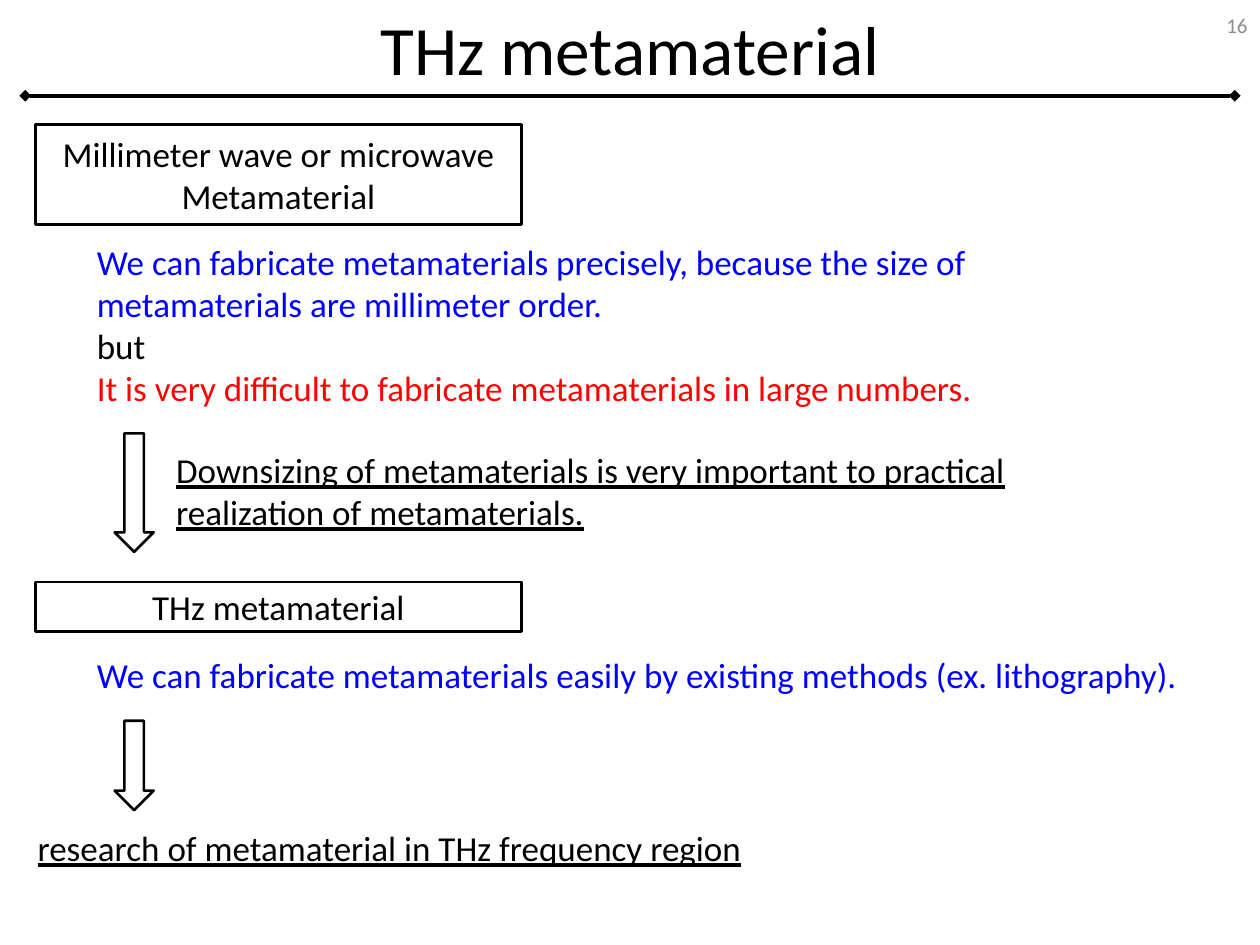
from dataclasses import dataclass

from lxml.etree import SubElement
from pptx import Presentation
from pptx.dml.color import RGBColor as Rgb
from pptx.enum.shapes import MSO_CONNECTOR as Link, MSO_SHAPE as Kind
from pptx.enum.text import MSO_ANCHOR as Anchor, PP_ALIGN as Align
from pptx.oxml.ns import qn
from pptx.util import Inches, Pt


@dataclass(frozen=True)
class Theme:
    font: str = "Calibri"
    black: str = "000000"
    blue: str = "0000FF"
    red: str = "FF0000"
    gray: str = "8C8C8C"
    title: float = 39.6
    body: float = 20
    small: float = 12
    rule: float = 2.25
    edge: float = 1.5


@dataclass(frozen=True)
class Area:
    """Place on the grid, in columns and rows."""
    col: float
    row: float
    wide: float
    high: float


@dataclass(frozen=True)
class Line:
    text: str
    color: str = Theme.black
    size: float = Theme.body
    under: bool = False


@dataclass(frozen=True)
class Note:
    area: Area
    lines: tuple[Line, ...]
    align: Align = Align.LEFT
    anchor: Anchor = Anchor.TOP


@dataclass(frozen=True)
class Figure:
    kind: Kind
    area: Area
    lines: tuple[Line, ...] = ()


COLS, ROWS = 100, 75
LOOK = Theme()
deck = Presentation()
deck.slide_width, deck.slide_height = Inches(10), Inches(7.5)
slide = deck.slides.add_slide(deck.slide_layouts[6])


def x(cols: float) -> int:
    return round(deck.slide_width * cols / COLS)


def y(rows: float) -> int:
    return round(deck.slide_height * rows / ROWS)


def frame(area: Area) -> tuple[int, int, int, int]:
    return x(area.col), y(area.row), x(area.wide), y(area.high)


def write(shape, lines: tuple[Line, ...], align: Align, anchor: Anchor) -> None:
    body = shape.text_frame
    body.text = "\n".join(line.text for line in lines)
    body.word_wrap = True
    body.vertical_anchor = anchor
    for para, line in zip(body.paragraphs, lines):
        para.alignment = align
        for run in para.runs:
            run.font.name = LOOK.font
            run.font.size = Pt(line.size)
            run.font.underline = line.under
            run.font.color.rgb = Rgb.from_string(line.color)


def add_note(note: Note) -> None:
    box = slide.shapes.add_textbox(*frame(note.area))
    write(box, note.lines, note.align, note.anchor)


def add_figure(item: Figure) -> None:
    shape = slide.shapes.add_shape(item.kind, *frame(item.area))
    shape.shadow.inherit = False
    shape.fill.background()
    shape.line.color.rgb = Rgb.from_string(LOOK.black)
    shape.line.width = Pt(LOOK.edge)
    if item.lines:
        write(shape, item.lines, Align.CENTER, Anchor.MIDDLE)


def add_rule(left: float, right: float, row: float) -> None:
    rule = slide.shapes.add_connector(Link.STRAIGHT, x(left), y(row), x(right), y(row))
    rule.line.color.rgb = Rgb.from_string(LOOK.black)
    rule.line.width = Pt(LOOK.rule)
    edge = rule.line._get_or_add_ln()
    for end in ("a:headEnd", "a:tailEnd"):
        SubElement(edge, qn(end), type="diamond")
    SubElement(rule._element.spPr, qn("a:effectLst"))


# Shared columns
BOX, TEXT, ARROW = 2.8, 6.7, 9.1

FIGURES = (
    Figure(Kind.RECTANGLE, Area(BOX, 9.9, 38.6, 7.9),
           (Line("Millimeter wave or microwave"), Line("Metamaterial"))),
    Figure(Kind.RECTANGLE, Area(BOX, 46.2, 38.6, 3.9), (Line("THz metamaterial"),)),
    Figure(Kind.DOWN_ARROW, Area(ARROW, 34.4, 3.1, 9.4)),
    Figure(Kind.DOWN_ARROW, Area(ARROW, 57.2, 3.1, 7.1)),
)

NOTES = (
    Note(Area(0, 0, COLS, 7.6), (Line("THz metamaterial", size=LOOK.title),),
         Align.CENTER, Anchor.MIDDLE),
    Note(Area(TEXT, 18.6, 76.4, 14.5), (
        Line("We can fabricate metamaterials precisely, because the size of "
             "metamaterials are millimeter order.", LOOK.blue),
        Line("but"),
        Line("It is very difficult to fabricate metamaterials in large numbers.", LOOK.red))),
    Note(Area(13, 35.1, 74, 7.7), (
        Line("Downsizing of metamaterials is very important to practical "
             "realization of metamaterials.", under=True),)),
    Note(Area(TEXT, 51.4, 89.8, 4.4), (
        Line("We can fabricate metamaterials easily by existing methods "
             "(ex. lithography).", LOOK.blue),)),
    Note(Area(2, 65.1, 64.6, 4.4), (
        Line("research of metamaterial in THz frequency region", under=True),)),
    Note(Area(76.7, 0, 23.3, 4), (Line("16", LOOK.gray, LOOK.small),),
         Align.RIGHT, Anchor.MIDDLE),
)

# Rule under the title
add_rule(2, 98, 7.6)

# Topic boxes and arrows
for item in FIGURES:
    add_figure(item)

# Title, statements and page number
for note in NOTES:
    add_note(note)

deck.save("out.pptx")
